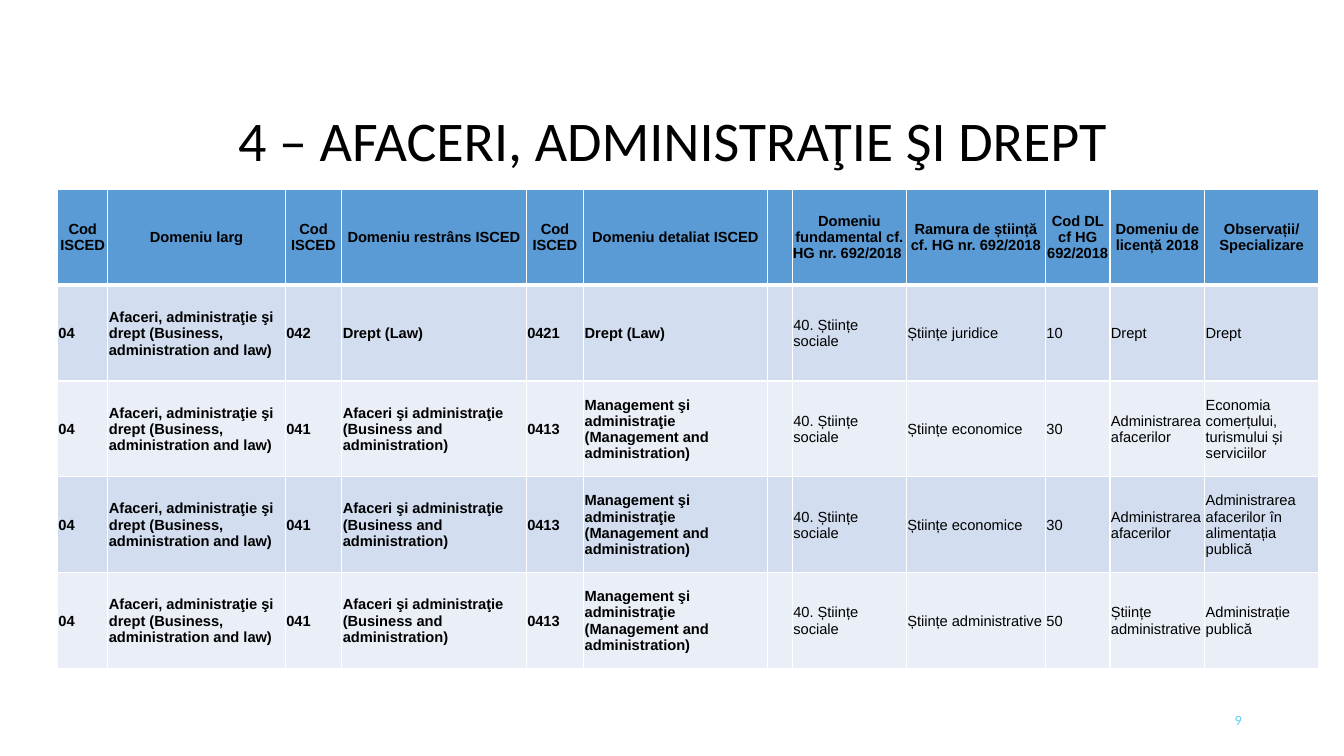
import pptx
import pptx.util
import pptx.dml.color
import pptx.enum.text
import pptx.oxml
import pptx.oxml.ns

Inches, Pt = pptx.util.Inches, pptx.util.Pt
ALIGN = pptx.enum.text.PP_ALIGN
MIDDLE = pptx.enum.text.MSO_ANCHOR.MIDDLE
COLORS = {"text": "000000", "header": "5B9BD5", "odd": "D2DEEF",
          "even": "EAEFF7", "border": "FFFFFF", "number": "5FCBEF"}

# Table content; None marks the narrow column that separates the two systems
WIDTHS = [0.5, 1.76, 0.56, 1.83, 0.57, 1.82, 0.25, 1.13, 1.38, 0.64, 0.94, 1.13]
ROW_HEIGHT = 0.95
BOLD_COLUMNS = 6
HEADER = ["Cod ISCED", "Domeniu larg", "Cod ISCED", "Domeniu restrâns ISCED",
          "Cod ISCED", "Domeniu detaliat ISCED", None,
          "Domeniu fundamental cf. HG nr. 692/2018 ",
          "Ramura de știință cf. HG nr. 692/2018", "Cod DL cf HG 692/2018",
          "Domeniu de licență 2018", "Observații/ Specializare"]
BROAD = ["04", "Afaceri, administraţie şi drept (Business, administration and law)"]
LAW = ["042", "Drept (Law)", "0421", "Drept (Law)"]
BUSINESS = ["041", "Afaceri şi administraţie (Business and administration)",
            "0413", "Management şi administraţie (Management and administration)"]
FIELDS = [
    (LAW, ["Științe juridice", "10", "Drept", "Drept"]),
    (BUSINESS, ["Științe economice", "30", "Administrarea afacerilor",
                "Economia comerțului, turismului și serviciilor"]),
    (BUSINESS, ["Științe economice", "30", "Administrarea afacerilor",
                "Administrarea afacerilor în alimentația publică"]),
    (BUSINESS, ["Științe administrative", "50", "Științe administrative",
                "Administrație publică"]),
]
ROWS = [HEADER] + [BROAD + isced + [None, "40. Științe sociale"] + national
                   for isced, national in FIELDS]


class SlideBuilder:
    def __init__(self, prs):
        self.slide = prs.slides.add_slide(prs.slide_layouts[5])

    def add_text(self, tf, text, color, align, **font):
        p = tf.paragraphs[0]
        p.alignment = align
        r = p.add_run()
        r.text = text
        for name, value in font.items():
            setattr(r.font, name, value)
        r.font.color.rgb = pptx.dml.color.RGBColor.from_string(COLORS[color])
        return p

    def place(self, sp, box):
        for name, value in zip(("left", "top", "width", "height"), box):
            setattr(sp, name, Inches(value))
        sp.text_frame.word_wrap = True
        sp.text_frame.vertical_anchor = MIDDLE
        sp.text_frame.auto_size = pptx.enum.text.MSO_AUTO_SIZE.NONE

    def title(self, text, box):
        sp = self.slide.shapes.title
        self.place(sp, box)
        p = self.add_text(sp.text_frame, text, "text", ALIGN.CENTER,
                          name="Calibri", size=Pt(40))
        p.line_spacing = 0.9

    def label(self, text, box):
        sp = self.slide.shapes.add_textbox(0, 0, 0, 0)
        self.place(sp, box)
        self.add_text(sp.text_frame, text, "number", ALIGN.RIGHT,
                      name="Lato", size=Pt(9))

    def borders(self, cell, top, bottom):
        tc_pr = cell._tc.get_or_add_tcPr()
        sides = {"L": 1, "R": 1, "T": top, "B": bottom}
        for i, (side, width) in enumerate(sides.items()):
            tc_pr.insert(i, pptx.oxml.parse_xml(
                f'<a:ln{side} {pptx.oxml.ns.nsdecls("a")} w="{Pt(width)}">'
                f'<a:solidFill><a:srgbClr val="{COLORS["border"]}"/></a:solidFill>'
                f'</a:ln{side}>'))

    def cell(self, cell, text, row, col):
        header = row == 0
        inset = Inches(0 if header else 0.01)
        style = {"margin_left": inset, "margin_top": inset, "margin_right": inset,
                 "margin_bottom": 0, "vertical_anchor": MIDDLE}
        for name, value in style.items():
            setattr(cell, name, value)
        fill = "header" if header else "odd" if row % 2 else "even"
        cell.fill.solid()
        cell.fill.fore_color.rgb = pptx.dml.color.RGBColor.from_string(COLORS[fill])
        self.borders(cell, 3 if row == 1 else 1, 3 if header else 1)
        if text:
            self.add_text(cell.text_frame, text, "text",
                          ALIGN.CENTER if header else ALIGN.LEFT, name="Arial",
                          size=Pt(10.5), bold=header or col < BOLD_COLUMNS)

    def table(self, rows, left, top):
        table = self.slide.shapes.add_table(
            len(rows), len(WIDTHS), Inches(left), Inches(top),
            Inches(sum(WIDTHS)), Inches(ROW_HEIGHT * len(rows))).table
        for column, width in zip(table.columns, WIDTHS):
            column.width = Inches(width)
        for i, texts in enumerate(rows):
            table.rows[i].height = Inches(ROW_HEIGHT)
            for j, text in enumerate(texts):
                self.cell(table.cell(i, j), text, i, j)


def main():
    prs = pptx.Presentation()
    prs.slide_width, prs.slide_height = Inches(13.33), Inches(7.5)
    builder = SlideBuilder(prs)
    # Heading, classification table, page number
    builder.title("4 – AFACERI, ADMINISTRAŢIE ŞI DREPT", (0.92, 1.06, 11.5, 0.72))
    builder.table(ROWS, 0.57, 1.88)
    builder.label("9", (9.42, 6.95, 3, 0.4))
    prs.save("out.pptx")


if __name__ == "__main__":
    main()
